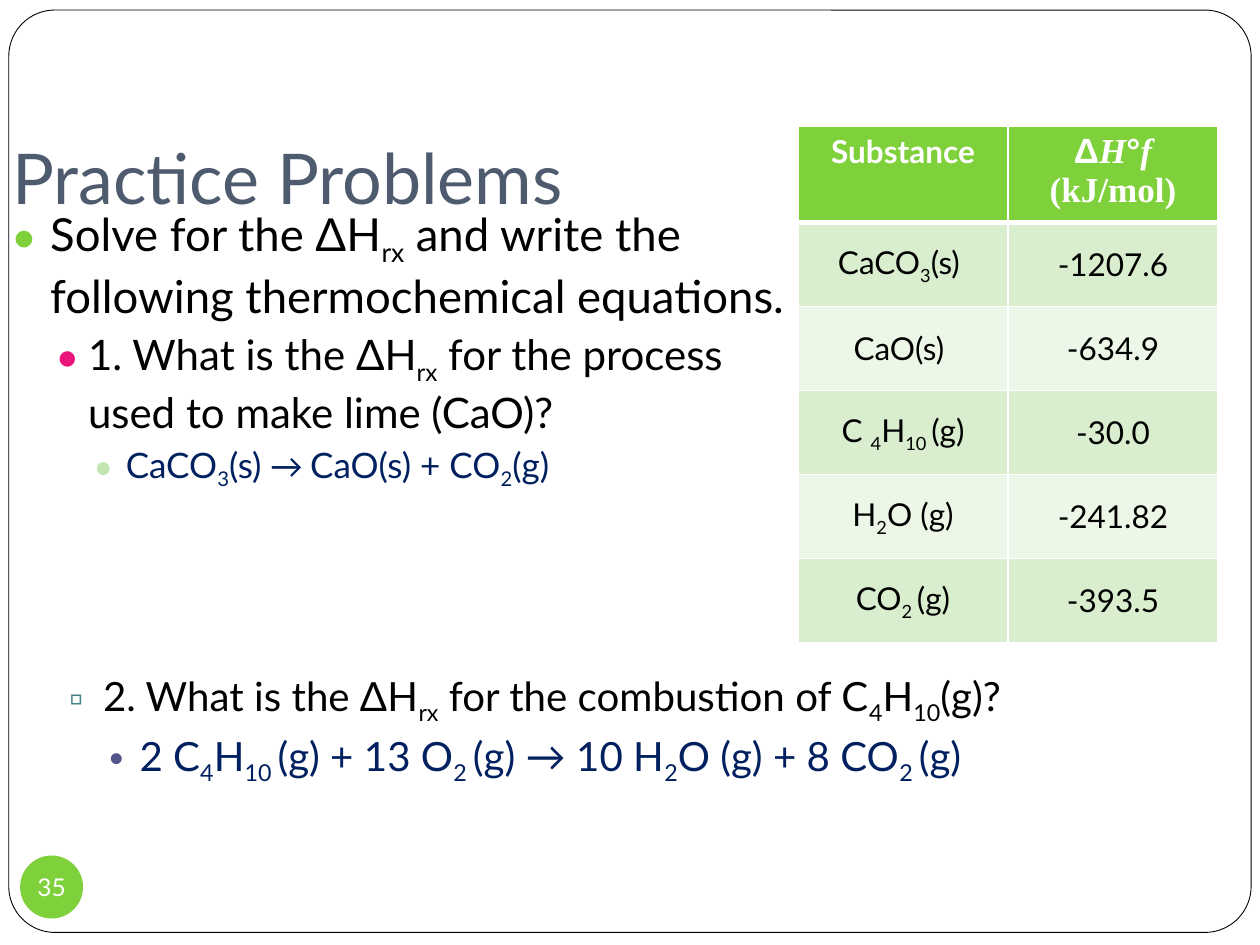
import pptx
import pptx.dml.color
import pptx.enum.shapes
import pptx.enum.text
import pptx.oxml
import pptx.oxml.ns
import pptx.util

ALIGN = pptx.enum.text.PP_ALIGN
ANCHOR = pptx.enum.text.MSO_ANCHOR
SHAPE = pptx.enum.shapes.MSO_SHAPE
NS = pptx.oxml.ns.nsdecls("a")
GREEN, WHITE, BLACK, NAVY = "7FD13B", "FFFFFF", "000000", "002060"
SLATE = "4E5B6F"


def color(text):
    return pptx.dml.color.RGBColor.from_string(text)


class Deck:
    """Style and current slide; lengths are in grid units, six to the inch."""

    font = "Lato"

    def __init__(self):
        self.file = pptx.Presentation()
        self.file.slide_width = self.unit(60)
        self.file.slide_height = self.unit(45)
        self.slide = self.file.slides.add_slide(self.file.slide_layouts[6])

    def unit(self, count):
        return pptx.util.Inches(count / 6)

    def place(self, spot):
        return [self.unit(part) for part in spot]

    def style(self, run, size, ink, bold=False, font=None, slant=False):
        run.font.name = font or self.font
        run.font.size = pptx.util.Pt(size)
        run.font.color.rgb = color(ink)
        run.font.bold = bold
        run.font.italic = slant

    def words(self, para, text, size, ink):
        """Every second piece between bars is a subscript."""
        for index, piece in enumerate(text.split("|")):
            if not piece:
                continue
            run = para.add_run()
            run.text = piece
            arrow = piece.startswith("→")
            self.style(run, size, ink, font="Calibri" if arrow else None)
            if index % 2:
                run.font._element.set("baseline", "-25000")

    def shape(self, kind, spot, fill, line=None):
        form = self.slide.shapes.add_shape(kind, *self.place(spot))
        form.shadow.inherit = False
        form.fill.solid()
        form.fill.fore_color.rgb = color(fill)
        if line:
            form.line.color.rgb = color(line)
            form.line.width = pptx.util.Pt(0.5)
        else:
            form.line.fill.background()
        return form

    def text(self, spot, top=0.05, low=0.05, anchor=ANCHOR.TOP):
        frame = self.slide.shapes.add_textbox(*self.place(spot)).text_frame
        frame.word_wrap = True
        frame.margin_top = pptx.util.Inches(top)
        frame.margin_bottom = pptx.util.Inches(low)
        frame.vertical_anchor = anchor
        return frame

    def bullet(self, para, left, hang, space, mark, ink, scale):
        para.space_before = pptx.util.Pt(space)
        props = para._p.get_or_add_pPr()
        props.set("marL", str(pptx.util.Inches(left)))
        props.set("indent", str(-pptx.util.Inches(hang)))
        for part in (f'<a:buClr {NS}><a:srgbClr val="{ink}"/></a:buClr>',
                     f'<a:buSzPct {NS} val="{scale * 1000}"/>',
                     f'<a:buFont {NS} typeface="Arial"/>',
                     f'<a:buChar {NS} char="{mark}"/>'):
            props.append(pptx.oxml.parse_xml(part))

    def list(self, frame, items):
        for index, (text, size, ink, *look) in enumerate(items):
            para = frame.add_paragraph() if index else frame.paragraphs[0]
            self.words(para, text, size, ink)
            self.bullet(para, *look)

    def cell(self, cell, fill, base=1):
        props = cell._tc.get_or_add_tcPr()
        for side in "LRTB":
            width = pptx.util.Pt(base if side == "B" else 1)
            props.append(pptx.oxml.parse_xml(
                f'<a:ln{side} {NS} w="{width}"><a:solidFill>'
                f'<a:srgbClr val="{WHITE}"/></a:solidFill></a:ln{side}>'))
        cell.fill.solid()
        cell.fill.fore_color.rgb = color(fill)
        para = cell.text_frame.paragraphs[0]
        para.alignment = ALIGN.CENTER
        return para

    def table(self, spot, rows, heads):
        count = len(rows) + 1
        grid = self.slide.shapes.add_table(
            count, len(heads), *self.place(spot)).table
        # Header row: each head is a list of (text, size, font, slant)
        for col, head in enumerate(heads):
            para = self.cell(grid.cell(0, col), GREEN, 3)
            for text, size, font, slant in head:
                run = para.add_run()
                run.text = text
                self.style(run, size, WHITE, True, font, slant)
        # Banded data rows
        for row, texts in enumerate(rows, 1):
            for col, text in enumerate(texts):
                cell = grid.cell(row, col)
                cell.vertical_anchor = ANCHOR.MIDDLE
                para = self.cell(cell, "D8EECE" if row % 2 else "ECF7E8")
                self.words(para, text, 18, BLACK)


def main():
    deck = Deck()

    # Page frame
    frame = deck.shape(SHAPE.ROUNDED_RECTANGLE,
                       (0.42, 0.48, 59.16, 43.92), WHITE, BLACK)
    frame.adjustments[0] = 0.05

    # Title
    title = deck.text((0, 4, 54, 7), low=0.1, anchor=ANCHOR.BOTTOM)
    deck.words(title.paragraphs[0], "Practice Problems", 40, SLATE)

    # First problem
    deck.list(deck.text((0, 9.5, 38, 32)), [
        ("Solve for the ΔH|rx| and write the following thermochemical "
         "equations.", 26, BLACK, 0.3, 0.3, 5.8, "●", GREEN, 85),
        ("1. What is the ΔH|rx| for the process used to make lime (CaO)?",
         24, BLACK, 0.6, 0.25, 3.7, "●", "EA157A", 85),
        ("CaCO|3|(s) ||→ ||CaO(s) + CO|2|(g)",
         20, NAVY, 0.9, 0.25, 3.7, "●", "C0E5AF", 85),
    ])

    # Heats of formation
    serif = "Times New Roman"
    deck.table((38, 6, 20, 24), [
        ("CaCO|3|(s) ", "-1207.6"),
        ("CaO(s) ", "-634.9"),
        ("C |4|H|10 |(g)", "-30.0"),
        ("H|2|O (g)", "-241.82"),
        ("CO|2 |(g)", "-393.5"),
    ], [
        [("Substance", 18, deck.font, False)],
        [("Δ", 20, "Arial", False), ("H", 20, serif, True),
         ("°", 20, "Arial", False), ("f", 20, serif, True),
         (" (kJ/mol)", 20, serif, False)],
    ])

    # Second problem
    deck.list(deck.text((0, 29, 57, 10.5), top=0.49), [
        ("2. What is the ΔH|rx| for the combustion of C|4|H|10|(g)?",
         23, BLACK, 0.72, 0.27, 3, "▫", "438086", 100),
        ("2 C|4|H|10 |(g) + 13 O|2 |(g) → 10 H|2|O (g) + 8 CO|2 |(g)",
         23, NAVY, 1.01, 0.24, 3, "•", "53548A", 100),
    ])

    # Page number
    disc = deck.shape(SHAPE.OVAL, (0.96, 40.74, 3, 3), GREEN).text_frame
    disc.margin_left = disc.margin_right = 0
    disc.margin_top = disc.margin_bottom = 0
    disc.word_wrap = False
    disc.vertical_anchor = ANCHOR.MIDDLE
    disc.paragraphs[0].alignment = ALIGN.CENTER
    deck.words(disc.paragraphs[0], "35", 14, WHITE)

    deck.file.save("out.pptx")


if __name__ == "__main__":
    main()
